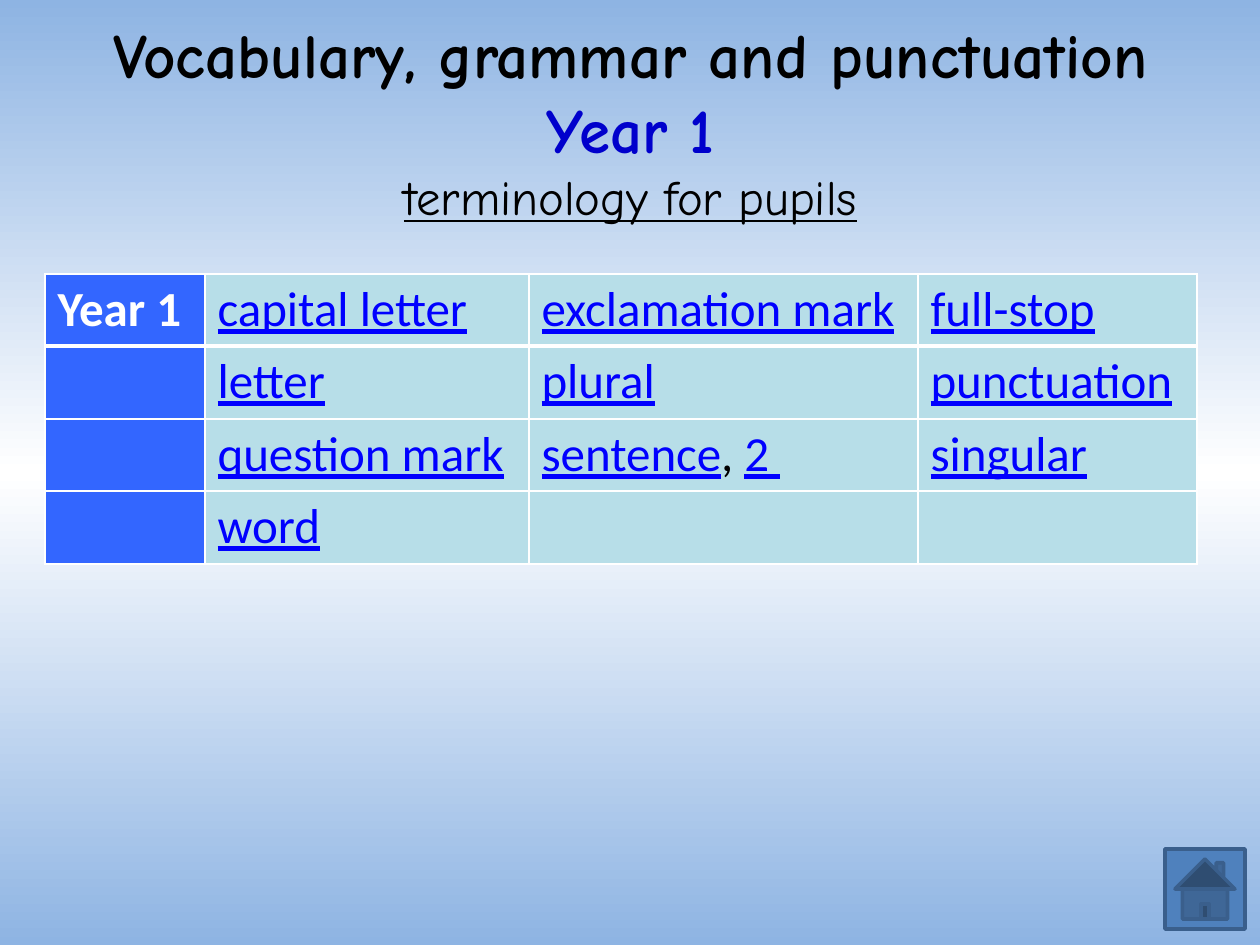
from copy import deepcopy
from dataclasses import dataclass

from lxml.etree import SubElement
from pptx import Presentation
from pptx.dml.color import RGBColor
from pptx.enum.shapes import MSO_SHAPE as Shape
from pptx.enum.text import MSO_ANCHOR as Anchor, PP_ALIGN as Align
from pptx.oxml.ns import qn
from pptx.util import Emu, Pt

# Content
TITLE, YEAR, SUBTITLE = (
    "Vocabulary, grammar and punctuation ", "Year 1", "terminology for pupils")
LINK_ROWS = [
    ["capital letter", "exclamation mark", "full-stop"],
    ["letter", "plural", "punctuation"],
    ["question mark", ("sentence", ", ", "2 "), "singular"],
    ["word", "", ""],
]

# Layout in px
SLIDE_SIZE = (1260, 945)
TITLE_BOX = (35, 16, 1191, 208)
TABLE_ORIGIN = (45, 274)
COLUMN_WIDTHS = [160, 324, 389, 279]
ROW_HEIGHTS = [72, 73, 72, 73]
HOME_BOX = (1165, 849, 80, 80)


@dataclass(frozen=True)
class Theme:
    title_font: str = "Comic Neue"
    table_font: str = "Calibri"
    title_size: float = 36
    subtitle_size: float = 27.9
    table_size: float = 28
    black: str = "000000"
    white: str = "FFFFFF"
    sky: str = "8EB4E3"
    year: str = "0000CC"
    link: str = "0000FF"
    header: str = "3366FF"
    cell: str = "B7DEE8"
    button: str = "4F81BD"
    button_line: str = "3A5F8C"


THEME = Theme()


def px(*lengths):
    return [Emu(round(length * 914400 / 126)) for length in lengths]


def rgb(color):
    return RGBColor.from_string(color)


def add_run(paragraph, text, font, size, color, bold=False, underline=False):
    run = paragraph.add_run()
    run.text = text
    run.font.name, run.font.size = font, Pt(size)
    run.font.bold, run.font.underline = bold, underline
    run.font.color.rgb = rgb(color)


def set_background(slide):
    fill = slide.background.fill
    fill.gradient()
    fill.gradient_angle = 90
    stop_list = slide.element.find(".//" + qn("a:gsLst"))
    stop_list.insert(1, deepcopy(stop_list[0]))
    colors = (THEME.sky, THEME.white, THEME.sky)
    for stop, position, color in zip(fill.gradient_stops, (0, 0.5, 1), colors):
        stop.position = position
        stop.color.rgb = rgb(color)


def add_home_button(slide):
    button = slide.shapes.add_shape(Shape.ACTION_BUTTON_HOME, *px(*HOME_BOX))
    button.shadow.inherit = False
    button.fill.solid()
    button.fill.fore_color.rgb = rgb(THEME.button)
    button.line.color.rgb = rgb(THEME.button_line)
    button.line.width = Pt(2)


def add_title(slide):
    frame = slide.shapes.add_textbox(*px(*TITLE_BOX)).text_frame
    frame.word_wrap = True
    frame.vertical_anchor = Anchor.MIDDLE
    paragraph = frame.paragraphs[0]
    paragraph.alignment = Align.CENTER
    font, size = THEME.title_font, THEME.title_size
    add_run(paragraph, TITLE, font, size, THEME.black, bold=True)
    add_run(paragraph, YEAR, font, size, THEME.year, bold=True)
    paragraph.add_line_break()
    add_run(paragraph, SUBTITLE, font, THEME.subtitle_size, THEME.black, underline=True)


def style_cell(cell, color, top, bottom):
    properties = cell._tc.get_or_add_tcPr()
    for side, width in (("L", 1), ("R", 1), ("T", top), ("B", bottom)):
        line = SubElement(properties, qn(f"a:ln{side}"), w=str(Pt(width)))
        line_fill = SubElement(line, qn("a:solidFill"))
        SubElement(line_fill, qn("a:srgbClr"), val=THEME.white)
    cell.fill.solid()
    cell.fill.fore_color.rgb = rgb(color)


def add_table(slide):
    size = sum(COLUMN_WIDTHS), sum(ROW_HEIGHTS)
    table = slide.shapes.add_table(
        len(ROW_HEIGHTS), len(COLUMN_WIDTHS), *px(*TABLE_ORIGIN, *size)).table
    for column, width in zip(table.columns, px(*COLUMN_WIDTHS)):
        column.width = width
    for row, height in zip(table.rows, px(*ROW_HEIGHTS)):
        row.height = height

    font, text_size = THEME.table_font, THEME.table_size
    for row_index, links in enumerate(LINK_ROWS):
        top = 3 if row_index == 1 else 1
        bottom = 3 if row_index == 0 else 1
        year_cell, *link_cells = table.rows[row_index].cells
        style_cell(year_cell, THEME.header, top, bottom)
        if row_index == 0:
            add_run(year_cell.text_frame.paragraphs[0], YEAR, font, text_size,
                    THEME.white, bold=True)
        for cell, words in zip(link_cells, links):
            style_cell(cell, THEME.cell, top, bottom)
            for word in (words,) if isinstance(words, str) else words:
                if word:
                    is_link = word != ", "
                    add_run(cell.text_frame.paragraphs[0], word, font, text_size,
                            THEME.link if is_link else THEME.black, underline=is_link)


def main():
    presentation = Presentation()
    presentation.slide_width, presentation.slide_height = px(*SLIDE_SIZE)
    slide = presentation.slides.add_slide(presentation.slide_layouts[6])
    set_background(slide)
    add_home_button(slide)
    add_title(slide)
    add_table(slide)
    presentation.save("out.pptx")


if __name__ == "__main__":
    main()
